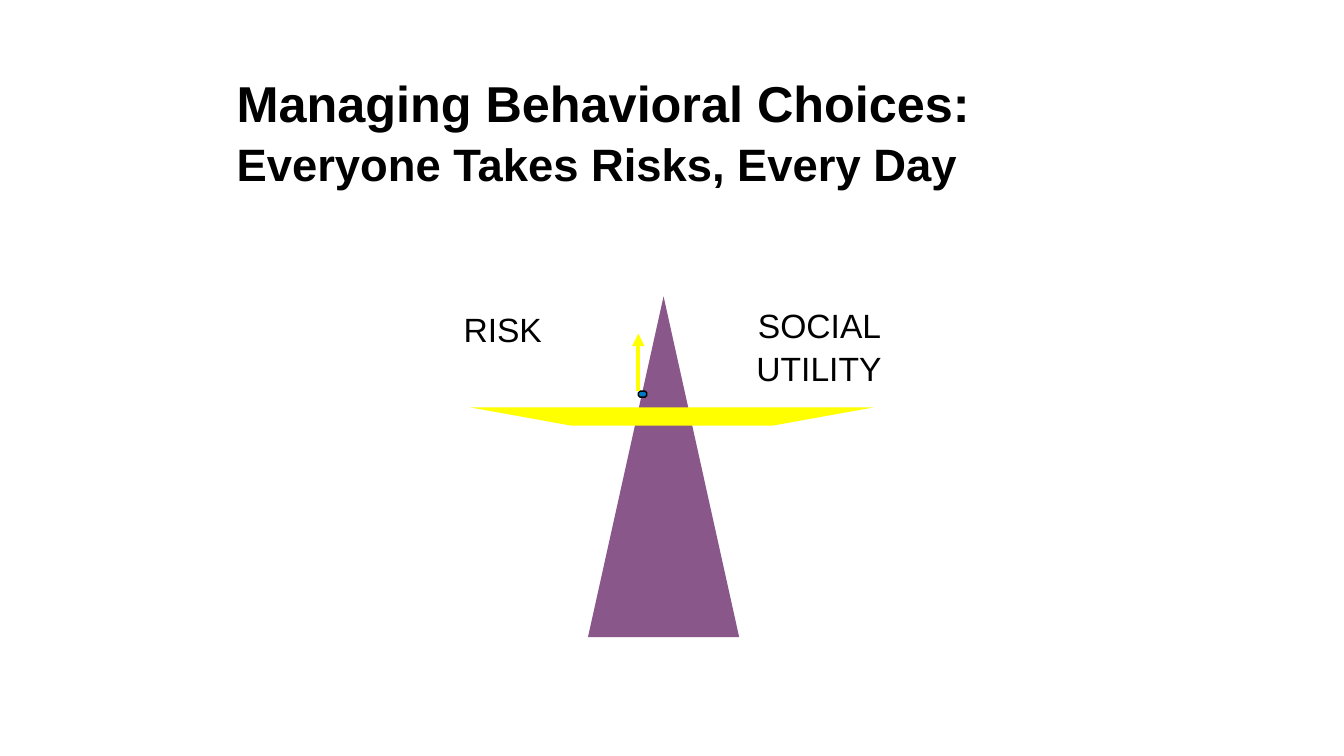
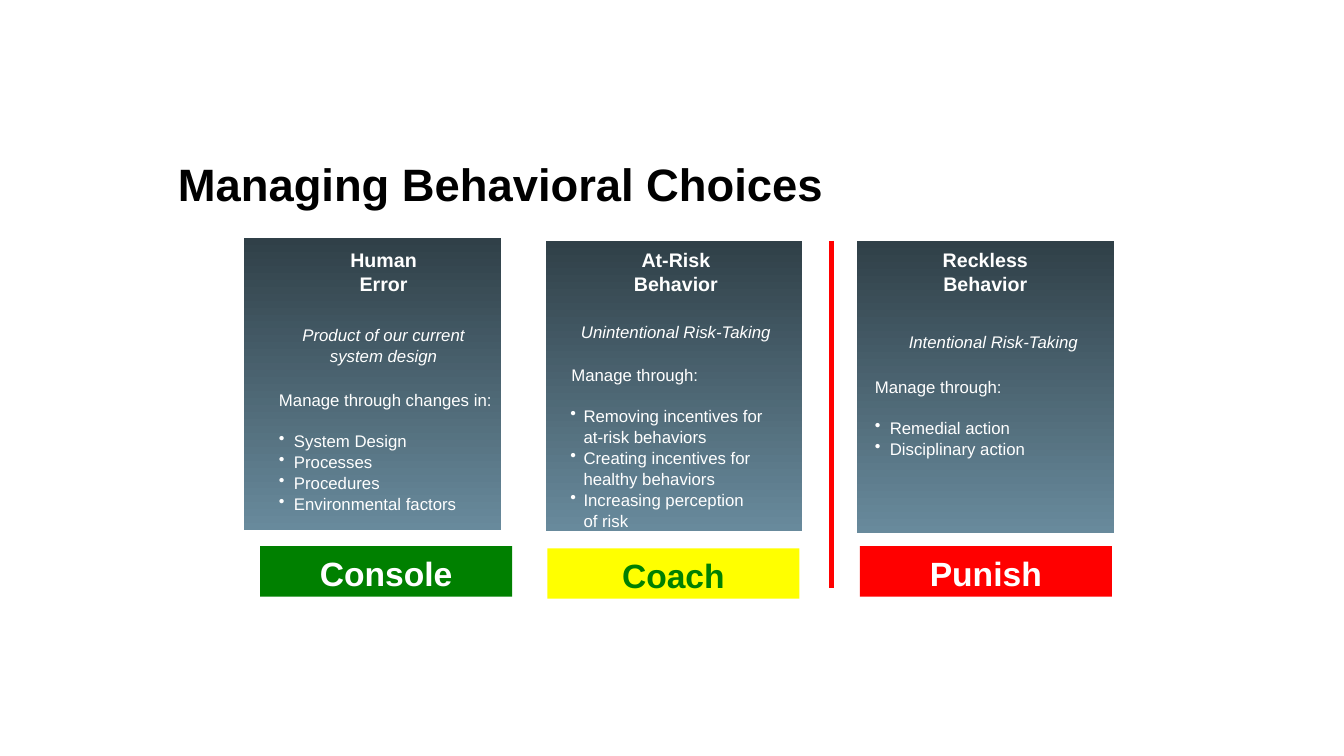
import pptx
import pptx.util
import pptx.dml.color
import pptx.enum.shapes
import pptx.enum.text
import pptx.oxml.ns
from lxml import etree

Pt = pptx.util.Pt
RGBColor = pptx.dml.color.RGBColor
SHAPE = pptx.enum.shapes.MSO_SHAPE
STRAIGHT = pptx.enum.shapes.MSO_CONNECTOR.STRAIGHT
ALIGN = pptx.enum.text.PP_ALIGN
ANCHOR = pptx.enum.text.MSO_ANCHOR
qn = pptx.oxml.ns.qn


class Theme:
    font = "Arial"
    black = RGBColor.from_string("000000")
    white = RGBColor.from_string("FFFFFF")
    purple = RGBColor.from_string("89578A")
    yellow = RGBColor.from_string("FFFF00")
    blue = RGBColor.from_string("0079C3")
    green = RGBColor.from_string("008000")
    red = RGBColor.from_string("FF0000")
    card_top = RGBColor.from_string("304048")
    card_bottom = RGBColor.from_string("688A9C")
    title = {"size": Pt(32.4), "bold": True, "color": black}
    label = {"size": Pt(24), "color": black}
    button = {"size": Pt(24), "bold": True}
    heading = {"size": Pt(14), "bold": True, "color": white}
    subtitle = {"size": Pt(12), "italic": True, "color": white}
    body = {"size": Pt(12), "color": white}
    large_spacing = 1.06
    small_spacing = 1.04


def write_text(shape, lines, style, alignment=ALIGN.LEFT, anchor=ANCHOR.TOP, spacing=Theme.large_spacing):
    """Fill a shape with one paragraph per line and return the paragraphs."""
    frame = shape.text_frame
    frame_format = {"word_wrap": True, "vertical_anchor": anchor,
                    "margin_left": Pt(7.2), "margin_right": Pt(7.2),
                    "margin_top": Pt(3.6), "margin_bottom": Pt(3.6)}
    for name, value in frame_format.items():
        setattr(frame, name, value)
    frame.text = "\n".join(lines)
    for paragraph in frame.paragraphs:
        paragraph.alignment = alignment
        paragraph.line_spacing = spacing
        for run in paragraph.runs:
            run.font.name = Theme.font
            for name, value in style.items():
                if name == "color":
                    run.font.color.rgb = value
                else:
                    setattr(run.font, name, value)
    return frame.paragraphs


def add_line(slide, start, end, color):
    """Draw a straight 3 pt line without a shadow."""
    connector = slide.shapes.add_connector(STRAIGHT, *map(Pt, start + end))
    connector.line.color.rgb = color
    connector.line.width = Pt(3)
    etree.SubElement(connector._element.spPr, qn("a:effectLst"))
    return connector


presentation = pptx.Presentation()
presentation.slide_width, presentation.slide_height = Pt(960), Pt(540)

# Slides and titles
titles = [
    ((162, 49, 648, 87), ["Managing Behavioral Choices:", "Everyone Takes Risks, Every Day"]),
    ((120, 106, 673, 48), ["Managing Behavioral Choices"]),
]
for box, lines in titles:
    slide = presentation.slides.add_slide(presentation.slide_layouts[6])
    title = slide.shapes.add_textbox(*map(Pt, box))
    paragraphs = write_text(title, lines, Theme.title, anchor=ANCHOR.MIDDLE)
    if len(paragraphs) > 1:
        paragraphs[0].runs[0].font.size = Pt(36)
balance_slide, choices_slide = presentation.slides

# Balance: stand, beam and pivot
stand = balance_slide.shapes.add_shape(SHAPE.ISOSCELES_TRIANGLE, Pt(420), Pt(211.7), Pt(108), Pt(243.4))
outline = balance_slide.shapes.build_freeform(Pt(336), Pt(291))
outline.add_line_segments([(Pt(x), Pt(y)) for x, y in [(408, 304), (552, 304), (624, 291)]])
beam = outline.convert_to_shape()
pivot = balance_slide.shapes.add_shape(SHAPE.OCTAGON, Pt(456), Pt(279.4), Pt(6), Pt(4.3))
for shape, color in [(stand, Theme.purple), (beam, Theme.yellow), (pivot, Theme.blue)]:
    shape.shadow.inherit = False
    shape.fill.solid()
    shape.fill.fore_color.rgb = color
    shape.line.fill.background()
pivot.line.color.rgb = Theme.black
pivot.line.width = Pt(1)

# Balance: pointer with arrowhead
pointer = add_line(balance_slide, (456, 279.4), (456, 238.3), Theme.yellow)
etree.SubElement(pointer.line._get_or_add_ln(), qn("a:tailEnd"), type="triangle")

# Balance: labels
for text, box, alignment in [("RISK", (324, 215.3, 84, 36), ALIGN.LEFT),
                             ("SOCIAL UTILITY", (528, 212.4, 114, 65.5), ALIGN.CENTER)]:
    label = balance_slide.shapes.add_textbox(*map(Pt, box))
    write_text(label, [text], Theme.label, alignment)

# Choices: one card per kind of behavior
cards = [
    {"card": (174.2, 170, 183.6, 208.8), "button": (185.8, 390.2), "button_text": "Console",
     "button_color": Theme.green, "button_font": Theme.white,
     "heading_left": 182.2, "heading": ["Human", "Error"],
     "subtitle_at": (182.2, 228.2), "subtitle": ["Product of our current", "system design"],
     "list": (192.2, 274.3, 183.6, 104), "intro": "Manage through changes in:",
     "intro_indent": 0, "bullet_indent": 10.7, "hanging": 10.7,
     "bullets": ["System Design", "Processes", "Procedures", "Environmental factors"]},
    {"card": (390.2, 172, 183, 207.4), "button": (391, 391.7), "button_text": "Coach",
     "button_color": Theme.yellow, "button_font": Theme.green,
     "heading_left": 391, "heading": ["At-Risk", "Behavior"],
     "subtitle_at": (391, 225.4), "subtitle": ["Unintentional Risk-Taking"],
     "list": (391, 256.3, 162, 122), "intro": "Manage through:",
     "intro_indent": 10, "bullet_indent": 18.7, "hanging": 9.4,
     "bullets": ["Removing incentives for at-risk behaviors",
                 "Creating incentives for healthy behaviors",
                 "Increasing perception\vof risk"]},
    {"card": (612, 172, 183.6, 208.8), "button": (614.2, 390.2), "button_text": "Punish",
     "button_color": Theme.red, "button_font": Theme.white,
     "heading_left": 612, "heading": ["Reckless", "Behavior"],
     "subtitle_at": (617.8, 232.6), "subtitle": ["Intentional Risk-Taking"],
     "list": (617.8, 265, 183.6, 98), "intro": "Manage through:",
     "intro_indent": 0, "bullet_indent": 10.7, "hanging": 10.7,
     "bullets": ["Remedial action", "Disciplinary action"]},
]
shapes = choices_slide.shapes
for card in cards:
    # Gradient panel
    panel = shapes.add_shape(SHAPE.RECTANGLE, *map(Pt, card["card"]))
    panel.shadow.inherit = False
    panel.line.fill.background()
    panel.fill.gradient()
    panel.fill.gradient_angle = 270
    for stop, position, color in zip(panel.fill.gradient_stops, (0, 1), (Theme.card_top, Theme.card_bottom)):
        stop.position = position
        stop.color.rgb = color

    # Heading and subtitle
    heading = shapes.add_textbox(Pt(card["heading_left"]), Pt(172.8), Pt(183.6), Pt(42))
    write_text(heading, card["heading"], Theme.heading, ALIGN.CENTER, spacing=Theme.small_spacing)
    subtitle_height = 7.2 + 14.4 * len(card["subtitle"])
    subtitle = shapes.add_textbox(*map(Pt, card["subtitle_at"] + (183.6, subtitle_height)))
    write_text(subtitle, card["subtitle"], Theme.subtitle, ALIGN.CENTER, spacing=Theme.small_spacing)

    # Bulleted actions
    actions = shapes.add_textbox(*map(Pt, card["list"]))
    intro, *bullets = write_text(actions, [card["intro"]] + card["bullets"], Theme.body,
                                 spacing=Theme.small_spacing)
    intro._p.get_or_add_pPr().set("marL", str(Pt(card["intro_indent"])))
    for paragraph in bullets:
        properties = paragraph._p.get_or_add_pPr()
        properties.set("marL", str(Pt(card["bullet_indent"])))
        properties.set("indent", str(-Pt(card["hanging"])))
        etree.SubElement(properties, qn("a:buChar"), char="•")
    bullets[0].space_before = Pt(14.3)

    # Response button
    button = shapes.add_shape(SHAPE.RECTANGLE, *map(Pt, card["button"] + (180, 36)))
    button.shadow.inherit = False
    button.line.fill.background()
    button.fill.solid()
    button.fill.fore_color.rgb = card["button_color"]
    write_text(button, [card["button_text"]], {**Theme.button, "color": card["button_font"]},
               ALIGN.CENTER, ANCHOR.MIDDLE)

# Choices: line before reckless behavior
add_line(choices_slide, (594, 172), (594, 420), Theme.red)

presentation.save("out.pptx")
